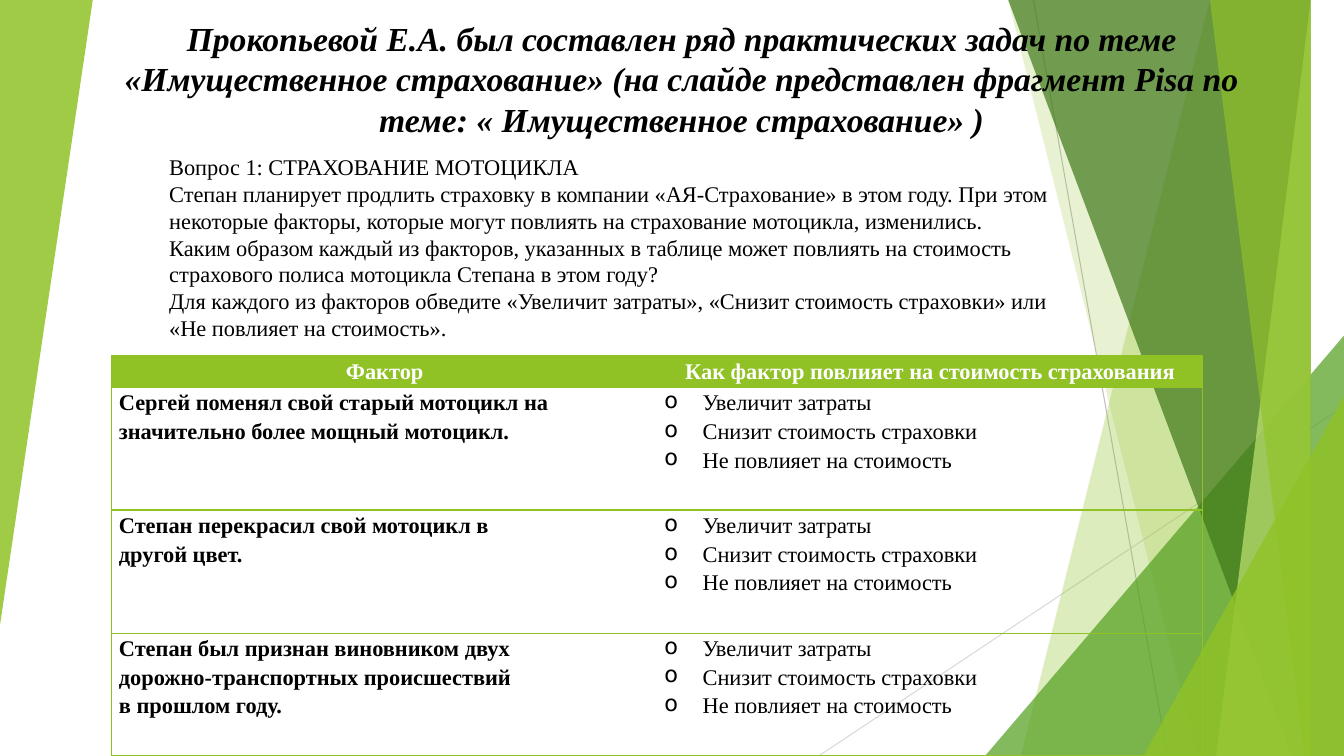
import pptx
import pptx.util
import pptx.dml.color
import pptx.enum.shapes
import pptx.enum.text
import pptx.oxml
import pptx.oxml.ns
import lxml.etree

WIDE, HIGH = 13.33, 7.5
FONT, LIME, BLACK, WHITE = "Times New Roman", "90C226", "000000", "FFFFFF"

# Content
TITLE = ("Прокопьевой Е.А. был составлен ряд практических задач по теме "
         "«Имущественное страхование» (на слайде представлен фрагмент Pisa по "
         "теме: « Имущественное страхование» )")
TASK = [
    "Вопрос 1: СТРАХОВАНИЕ МОТОЦИКЛА",
    "Степан планирует продлить страховку в компании «АЯ-Страхование» в этом году. При этом",
    "некоторые факторы, которые могут повлиять на страхование мотоцикла, изменились.",
    "Каким образом каждый из факторов, указанных в таблице может повлиять на стоимость",
    "страхового полиса мотоцикла Степана в этом году?",
    "Для каждого из факторов обведите «Увеличит затраты», «Снизит стоимость страховки» или",
    "«Не повлияет на стоимость».",
]
HEADS = ["Фактор", "Как фактор повлияет на стоимость страхования"]
FACTORS = [
    ["Сергей поменял свой старый мотоцикл на значительно более мощный мотоцикл."],
    ["Степан перекрасил свой мотоцикл в", "другой цвет."],
    ["Степан был признан виновником двух", "дорожно-транспортных происшествий",
     "в прошлом году."],
]
CHOICES = ["Увеличит затраты", "Снизит стоимость страховки", "Не повлияет на стоимость"]

# Backdrop, back to front
LINES = [((10.25, 0), (11.58, HIGH), "BFBFBF"), ((WIDE, 4.03), (8.12, HIGH), "D9D9D9")]
# Facet: left edge at top, left edge at bottom, colour, opacity
# Wedge: left, top, width, height, turn, colour, opacity
FACETS = [
    (12.28, 10.04, LIME, 30),
    (10.5, 11.83, LIME, 20),
    (9.77, 3.33, 3.56, 4.17, 0, "54A021", 72),
    (10.21, 12.91, "3F7819", 70),
    (13.03, 11.92, "C0E474", 70),
    (11.96, 13.18, LIME, 65),
    (11.34, 3.93, 1.99, 3.57, 0, LIME, 80),
    (0, 0, 0.92, 6.2, 180, LIME, 85),
]

inch, pt = pptx.util.Inches, pptx.util.Pt
ALIGN = pptx.enum.text.PP_ALIGN
qn = pptx.oxml.ns.qn


def color(code):
    return pptx.dml.color.RGBColor.from_string(code)


def paint(shape, code, alpha):
    shape.shadow.inherit = False
    shape.line.fill.background()
    shape.fill.solid()
    shape.fill.fore_color.rgb = color(code)
    tint = shape.fill._xPr.find(".//" + qn("a:srgbClr"))
    lxml.etree.SubElement(tint, qn("a:alpha")).set("val", str(alpha * 1000))


def write(frame, texts, size, code=BLACK, bold=False, slant=False, align=ALIGN.LEFT, gap=None):
    for n, text in enumerate(texts):
        para = frame.add_paragraph() if n else frame.paragraphs[0]
        para.alignment = align
        if gap:
            para.line_spacing = gap
        run = para.add_run()
        run.text = text
        font = run.font
        font.name, font.size, font.bold, font.italic = FONT, pt(size), bold, slant
        font.color.rgb = color(code)


def bullet(frame):
    for para in frame.paragraphs:
        props = para._p.get_or_add_pPr()
        props.set("marL", str(inch(0.38)))
        props.set("indent", str(-inch(0.38)))
        lxml.etree.SubElement(props, qn("a:buChar")).set("char", "o")


def edge(cell, widths):
    """Set borders in the order left, right, top, bottom; 0 means none."""
    props = cell._tc.get_or_add_tcPr()
    for n, (side, width) in enumerate(zip("LRTB", widths)):
        line = lxml.etree.Element(qn("a:ln" + side), w=str(pt(width)))
        if width:
            fill = lxml.etree.SubElement(line, qn("a:solidFill"))
            lxml.etree.SubElement(fill, qn("a:srgbClr")).set("val", LIME)
        else:
            lxml.etree.SubElement(line, qn("a:noFill"))
        props.insert(n, line)


def box(slide, left, top, width, height):
    frame = slide.shapes.add_textbox(*map(inch, (left, top, width, height))).text_frame
    frame.word_wrap = True
    return frame


def backdrop(slide):
    for start, end, code in LINES:
        line = slide.shapes.add_connector(
            pptx.enum.shapes.MSO_CONNECTOR.STRAIGHT, *map(inch, start + end))
        line.line.color.rgb = color(code)
        line.line.width = pt(0.75)
        lxml.etree.SubElement(line._element.spPr, qn("a:effectLst"))
    for *place, code, alpha in FACETS:
        if len(place) == 2:
            top, base = place
            form = slide.shapes.build_freeform(top, 0, scale=inch(1))
            form.add_line_segments([(WIDE, 0), (WIDE, HIGH), (base, HIGH)], close=True)
            shape = form.convert_to_shape()
        else:
            *rect, turn = place
            shape = slide.shapes.add_shape(
                pptx.enum.shapes.MSO_SHAPE.ISOSCELES_TRIANGLE, *map(inch, rect))
            shape.adjustments[0] = 1
            shape.rotation = turn
        paint(shape, code, alpha)


def grid(slide):
    rows, cols, head, body, col = len(FACTORS) + 1, len(HEADS), 0.31, 1.22, 5.41
    rect = (1.11, 3.53, cols * col, head + body * len(FACTORS))
    table = slide.shapes.add_table(rows, cols, *map(inch, rect)).table
    table.horz_banding = False
    for r in range(rows):
        table.rows[r].height = inch(body if r else head)
        for c in range(cols):
            table.columns[c].width = inch(col)
            cell = table.cell(r, c)
            cell.margin_left = cell.margin_right = inch(0.07)
            cell.margin_top = cell.margin_bottom = 0
            frame = cell.text_frame
            if r == 0:
                cell.fill.solid()
                cell.fill.fore_color.rgb = color(LIME)
                write(frame, [HEADS[c]], 16, WHITE, True, align=ALIGN.CENTER, gap=1.15)
            else:
                cell.fill.background()
                write(frame, CHOICES if c else FACTORS[r - 1], 16, bold=c == 0, gap=1.15)
                if c:
                    bullet(frame)
            # The rule between the last two factors is thinner
            above, below = (0.5 if n == rows - 1 else 1 for n in (r, r + 1))
            edge(cell, (c == 0, c == cols - 1, above, below))


def main():
    deck = pptx.Presentation()
    deck.slide_width, deck.slide_height = inch(WIDE), inch(HIGH)
    slide = deck.slides.add_slide(deck.slide_layouts[6])
    backdrop(slide)
    write(box(slide, 0.89, 0.13, 11.74, 1.31), [TITLE], 24, bold=True, slant=True,
          align=ALIGN.CENTER)
    grid(slide)
    write(box(slide, 1.58, 1.47, 9.03, 2), TASK, 16)
    deck.save("out.pptx")


if __name__ == "__main__":
    main()
